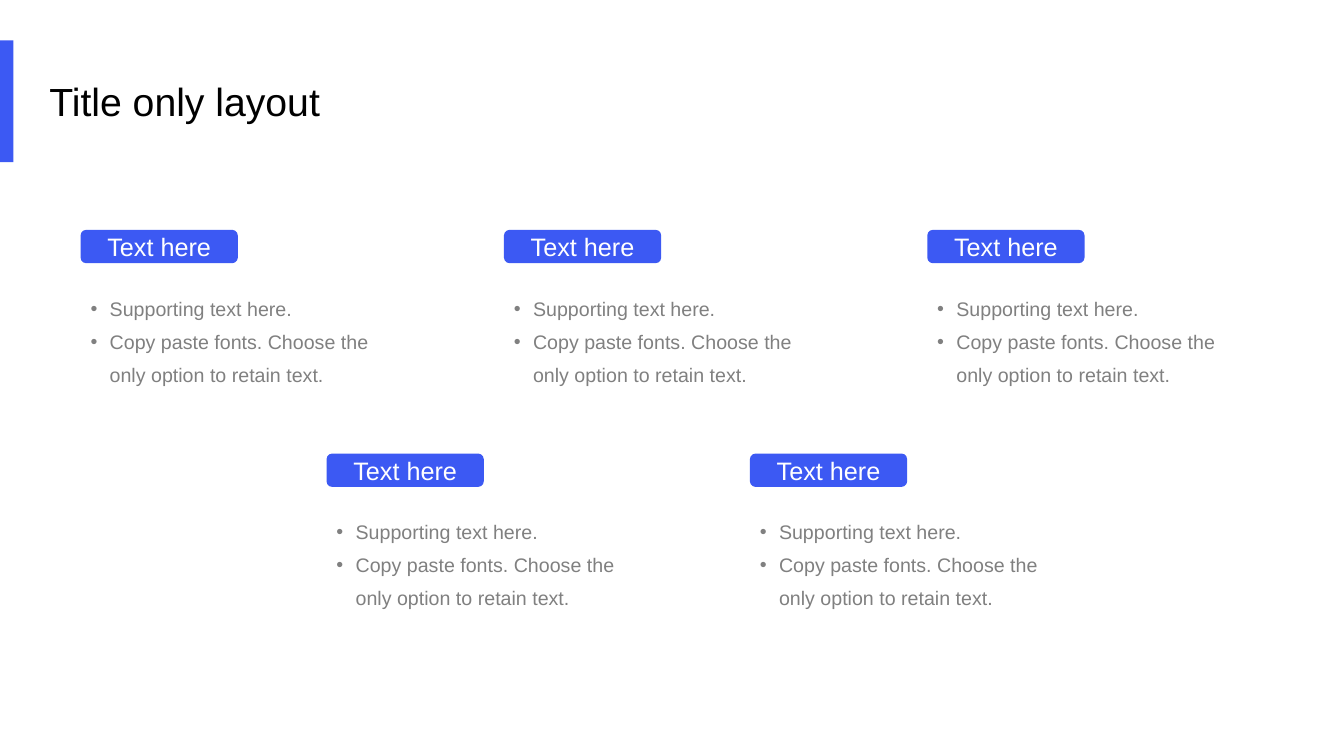
from lxml import etree
from pptx import Presentation
from pptx.dml.color import RGBColor
from pptx.enum.shapes import MSO_SHAPE
from pptx.enum.text import MSO_ANCHOR, MSO_AUTO_SIZE, PP_ALIGN
from pptx.oxml.ns import qn
from pptx.util import Pt

# Content: one (label, bullet lines) pair per block, grouped by row
TITLE = "Title only layout"
BLOCK = ("Text here", ["Supporting text here.",
                       "Copy paste fonts. Choose the only option to retain text."])
ROWS = [  # left of first block, top, blocks
    (57.6, 164.2, [BLOCK] * 3),
    (233.3, 324, [BLOCK] * 2),
]

# Layout, in points
SLIDE_WIDTH, SLIDE_HEIGHT = 960, 540
COLUMN_PITCH = 302.4
LABEL_WIDTH, LABEL_HEIGHT = 112.3, 23.8
BODY_OFFSET, BODY_WIDTH, BODY_HEIGHT = 37.4, 239.8, 80.6
BULLET_INDENT = 13.7

# Style
FONT = "Arial"
BLUE = RGBColor(0x3C, 0x59, 0xF3)
GRAY = RGBColor(0x80, 0x80, 0x80)
BLACK = RGBColor(0, 0, 0)
WHITE = RGBColor(0xFF, 0xFF, 0xFF)
RECTANGLE, ROUNDED = MSO_SHAPE.RECTANGLE, MSO_SHAPE.ROUNDED_RECTANGLE
LEFT, CENTER = PP_ALIGN.LEFT, PP_ALIGN.CENTER
TOP, MIDDLE = MSO_ANCHOR.TOP, MSO_ANCHOR.MIDDLE
NO_AUTOFIT = MSO_AUTO_SIZE.NONE


def add_bullet(paragraph):
    properties = paragraph._p.get_or_add_pPr()
    properties.set("marL", str(Pt(BULLET_INDENT)))
    properties.set("indent", str(-Pt(BULLET_INDENT)))
    etree.SubElement(properties, qn("a:buFont")).set("typeface", FONT)
    etree.SubElement(properties, qn("a:buChar")).set("char", "•")


def write_text(shape, lines, size, color, align=LEFT, anchor=TOP,
               margin=3.6, spacing=1.0, bullets=False):
    frame = shape.text_frame
    frame.text = "\n".join(lines)
    frame.word_wrap = True
    frame.auto_size = NO_AUTOFIT
    frame.vertical_anchor = anchor
    frame.margin_left = frame.margin_right = Pt(7.2)
    frame.margin_top = frame.margin_bottom = Pt(margin)
    for paragraph in frame.paragraphs:
        paragraph.alignment = align
        paragraph.line_spacing = spacing
        font = paragraph.runs[0].font
        font.name, font.size = FONT, Pt(size)
        font.color.rgb = color
        if bullets:
            add_bullet(paragraph)


def add_box(slide, kind, *box):
    shape = slide.shapes.add_shape(kind, *map(Pt, box))
    shape.shadow.inherit = False
    shape.fill.solid()
    shape.fill.fore_color.rgb = BLUE
    shape.line.fill.background()
    return shape


def add_block(slide, left, top, label, lines):
    pill = add_box(slide, ROUNDED, left, top, LABEL_WIDTH, LABEL_HEIGHT)
    write_text(pill, [label], size=18, color=WHITE, align=CENTER,
               anchor=MIDDLE, margin=0)
    body = slide.shapes.add_textbox(Pt(left), Pt(top + BODY_OFFSET),
                                    Pt(BODY_WIDTH), Pt(BODY_HEIGHT))
    write_text(body, lines, size=14, color=GRAY, spacing=1.4, bullets=True)


def main():
    presentation = Presentation()
    presentation.slide_width = Pt(SLIDE_WIDTH)
    presentation.slide_height = Pt(SLIDE_HEIGHT)
    slide = presentation.slides.add_slide(presentation.slide_layouts[5])

    # Title and accent bar
    title = slide.shapes.title
    title.left, title.top, title.width, title.height = map(
        Pt, (28.1, 51.8, 252.7, 41))
    write_text(title, [TITLE], size=28, color=BLACK)
    add_box(slide, RECTANGLE, 0, 28.8, 9.6, 87.1)

    # Rows of labelled blocks
    for row_left, top, blocks in ROWS:
        for column, (label, lines) in enumerate(blocks):
            add_block(slide, row_left + column * COLUMN_PITCH, top, label, lines)

    presentation.save("out.pptx")


if __name__ == "__main__":
    main()
